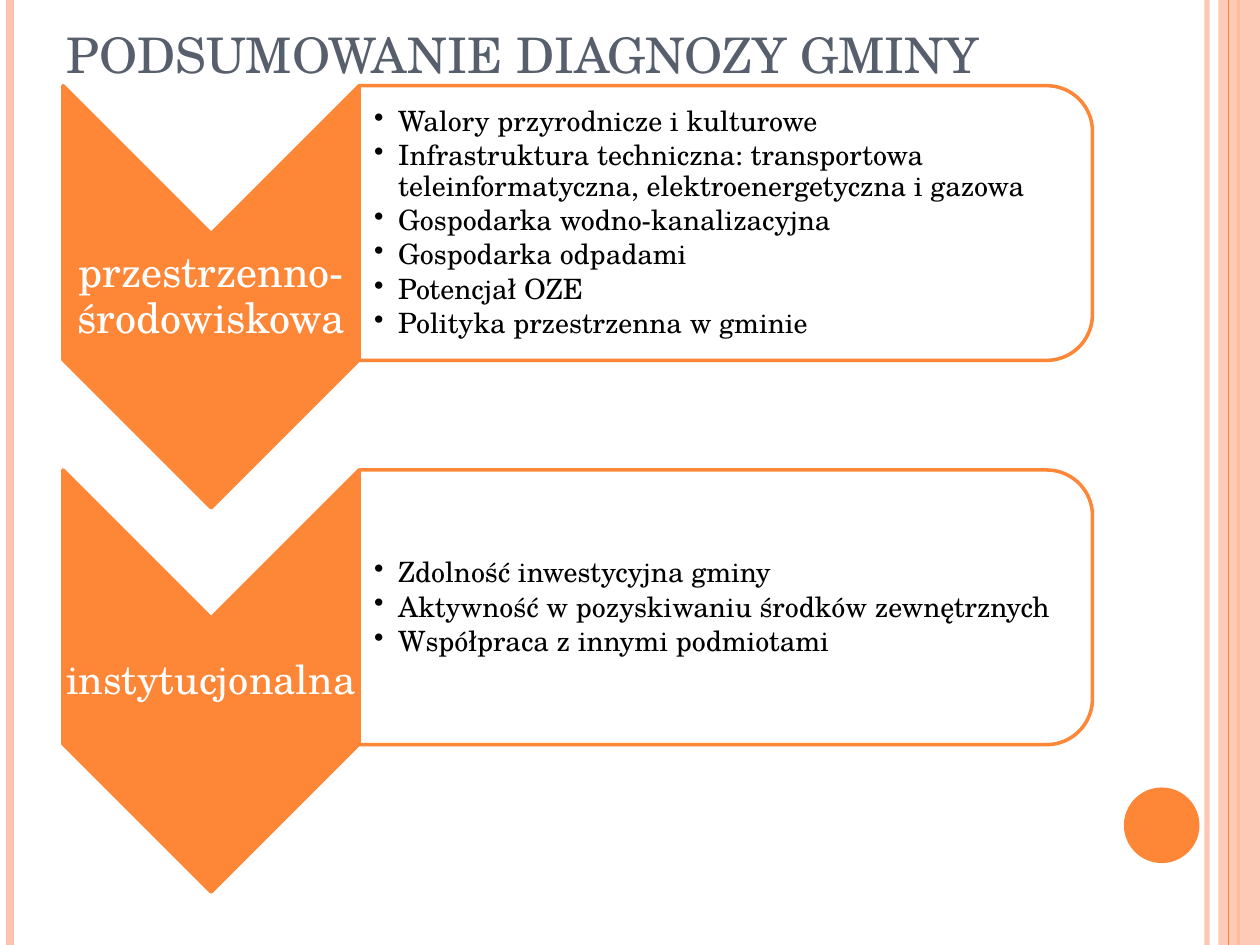
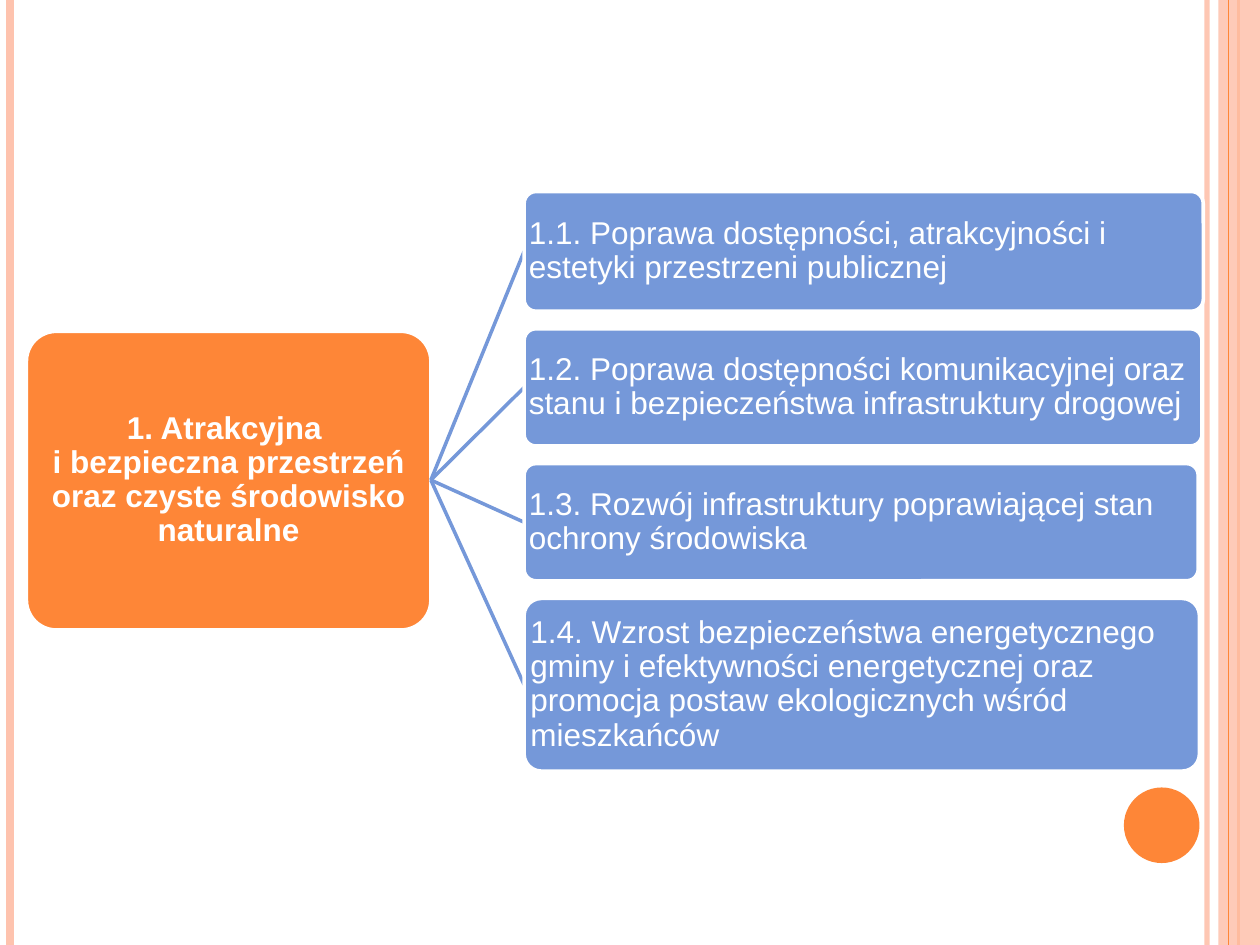
from dataclasses import dataclass

from pptx import Presentation
from pptx.dml.color import RGBColor
from pptx.enum.shapes import MSO_CONNECTOR, MSO_SHAPE
from pptx.enum.text import MSO_ANCHOR, PP_ALIGN
from pptx.oxml.ns import qn
from pptx.util import Inches, Pt
from lxml.etree import SubElement


@dataclass(frozen=True)
class Theme:
    """Colours, fonts and type sizes shared by the slides."""
    orange: str = "FE8637"
    peach: str = "FEC3AE"
    blue: str = "7598D9"
    slate: str = "575F6D"
    white: str = "FFFFFF"
    black: str = "000000"
    serif: str = "TeX Gyre Schola"
    sans: str = "Arial"
    title_size: int = 28
    list_size: int = 16
    goal_size: int = 18
    outline: int = 2


def apply(target, values):
    """Set each attribute named in values on the target."""
    for name, value in values.items():
        setattr(target, name, value)


class Deck:
    """Holds the theme and the current slide and draws each kind of element."""

    def __init__(self):
        """Start an empty 10 by 7.5 inch presentation."""
        self.theme = Theme()
        self.presentation = Presentation()
        apply(self.presentation, {"slide_width": Inches(10), "slide_height": Inches(7.5)})
        self.slide = None

    def new_slide(self):
        """Add a blank slide with the side stripes and the page dot."""
        theme = self.theme
        self.slide = self.presentation.slides.add_slide(self.presentation.slide_layouts[6])
        self.stripe(9.58, theme.peach, 3, 93)
        self.stripe(0.08, theme.peach, 4.5)
        self.stripe(9.83, theme.orange, 1.5)
        self.shape(MSO_SHAPE.RECTANGLE, (9.67, 0, 0.33, 7.5), theme.peach, opacity=87)
        self.stripe(9.75, theme.orange, 0.75)
        self.shape(MSO_SHAPE.OVAL, (8.92, 6.25, 0.6, 0.6), theme.orange)

    def fade(self, element, opacity):
        """Make the first colour of an element partly transparent."""
        if opacity < 100:
            colour = element.spPr.xpath(".//a:srgbClr")[0]
            SubElement(colour, qn("a:alpha"), val=str(opacity * 1000))

    def line(self, start, end, colour, weight, opacity=100):
        """Draw a straight line between two points."""
        line = self.slide.shapes.add_connector(
            MSO_CONNECTOR.STRAIGHT, *(Inches(value) for value in start + end))
        line.line.width = Pt(weight)
        line.line.color.rgb = RGBColor.from_string(colour)
        SubElement(line._element.spPr, qn("a:effectLst"))
        self.fade(line._element, opacity)

    def stripe(self, left, colour, weight, opacity=100):
        """Draw a full-height vertical line."""
        self.line((left, 0), (left, 7.5), colour, weight, opacity)

    def shape(self, preset, box, fill, outline=None, opacity=100):
        """Draw a filled preset shape."""
        shape = self.slide.shapes.add_shape(preset, *map(Inches, box))
        shape.shadow.inherit = False
        shape.fill.solid()
        shape.fill.fore_color.rgb = RGBColor.from_string(fill)
        if outline:
            shape.line.width = Pt(self.theme.outline)
            shape.line.color.rgb = RGBColor.from_string(outline)
        else:
            shape.line.fill.background()
        self.fade(shape._element, opacity)
        return shape

    def turned(self, preset, box, fill, opacity=100):
        """Draw a shape turned by 90 degrees that covers the given box."""
        left, top, width, height = box
        shift = (width - height) / 2
        shape = self.shape(preset, (left + shift, top - shift, height, width),
                           fill, self.theme.orange, opacity)
        shape.rotation = 90

    def typeset(self, frame, paragraphs, font, size, colour, bold=False, align=PP_ALIGN.LEFT,
                anchor=MSO_ANCHOR.MIDDLE, margins=(0.01,) * 4, spacing=0.9, after=0,
                bullets=False):
        """Fill a text frame with equally formatted paragraphs."""
        sides = ("margin_left", "margin_top", "margin_right", "margin_bottom")
        apply(frame, {"word_wrap": True, "vertical_anchor": anchor,
                      **dict(zip(sides, map(Inches, margins)))})
        for index, text in enumerate(paragraphs):
            paragraph = frame.add_paragraph() if index else frame.paragraphs[0]
            paragraph.text = text
            apply(paragraph, {"alignment": align, "line_spacing": spacing,
                              "space_after": Pt(size * after)})
            if bullets:
                properties = paragraph._p.get_or_add_pPr()
                properties.set("marL", str(Inches(0.19)))
                properties.set("indent", str(-Inches(0.19)))
                SubElement(properties, qn("a:buChar"), char="•")
            for run in paragraph.runs:
                apply(run.font, {"name": font, "size": Pt(size), "bold": bold})
                run.font.color.rgb = RGBColor.from_string(colour)

    def text(self, box, paragraphs, *style, **layout):
        """Add a text box."""
        frame = self.slide.shapes.add_textbox(*map(Inches, box)).text_frame
        self.typeset(frame, paragraphs, *style, **layout)

    def title(self, heading):
        """Add the slide title."""
        theme = self.theme
        self.text((0.43, 0, 8.17, 0.71), [heading], theme.serif, theme.title_size, theme.slate,
                  anchor=MSO_ANCHOR.BOTTOM, margins=(0.1, 0.05, 0.1, 0.05), spacing=1.0)

    def sphere(self, top, label, label_size, topics):
        """Draw a chevron with its label and the card of topics beside it."""
        theme = self.theme
        self.turned(MSO_SHAPE.CHEVRON, (0.5, top, 2.35, 3.35), theme.orange)
        self.text((0.5, top + 1.17, 2.35, 1.01), [label], theme.serif, label_size, theme.white,
                  align=PP_ALIGN.CENTER, margins=(0.02,) * 4)
        self.turned(MSO_SHAPE.ROUND_2_SAME_RECTANGLE, (2.85, top, 5.82, 2.18), theme.white, 90)
        self.text((2.85, top + 0.11, 5.71, 1.97), topics, theme.serif, theme.list_size,
                  theme.black, margins=(0.12, 0.01, 0.01, 0.01), after=0.15, bullets=True)

    def goal(self, box, wording, fill, **layout):
        """Draw a rounded goal box with its wording."""
        theme = self.theme
        goal = self.shape(MSO_SHAPE.ROUNDED_RECTANGLE, box, fill, theme.white)
        goal.adjustments[0] = 0.1
        self.typeset(goal.text_frame, [wording], theme.sans, theme.goal_size, theme.white,
                     **layout)


SPHERES = [
    ("przestrzenno-środowiskowa", 24, [
        "Walory przyrodnicze i kulturowe",
        "Infrastruktura techniczna: transportowa teleinformatyczna, elektroenergetyczna i gazowa",
        "Gospodarka wodno-kanalizacyjna",
        "Gospodarka odpadami",
        "Potencjał OZE",
        "Polityka przestrzenna w gminie",
    ]),
    ("instytucjonalna", 23, [
        "Zdolność inwestycyjna gminy",
        "Aktywność w pozyskiwaniu środków zewnętrznych",
        "Współpraca z innymi podmiotami",
    ]),
]

STRATEGIC_GOAL = "1. Atrakcyjna \vi bezpieczna przestrzeń oraz czyste środowisko naturalne"

OPERATIONAL_GOALS = [
    (5.39, 0.95, "1.1. Poprawa dostępności, atrakcyjności i estetyki przestrzeni publicznej"),
    (5.38, 0.93, "1.2. Poprawa dostępności komunikacyjnej oraz stanu i bezpieczeństwa "
                 "infrastruktury drogowej"),
    (5.35, 0.93, "1.3. Rozwój infrastruktury poprawiającej stan ochrony środowiska"),
    (5.36, 1.37, "1.4. Wzrost bezpieczeństwa energetycznego gminy i efektywności energetycznej "
                 "oraz promocja postaw ekologicznych wśród mieszkańców"),
]


def diagnosis_slide(deck):
    """Build the summary of the diagnosis."""
    deck.new_slide()
    deck.title("PODSUMOWANIE DIAGNOZY GMINY")
    for index, (label, label_size, topics) in enumerate(SPHERES):
        deck.sphere(0.68 + 3.05 * index, label, label_size, topics)


def goals_slide(deck):
    """Build the tree of goals."""
    theme = deck.theme
    deck.new_slide()
    deck.goal((0.21, 2.63, 3.21, 2.37), STRATEGIC_GOAL, theme.orange,
              bold=True, align=PP_ALIGN.CENTER)
    left, top, gap = 4.16, 1.52, 0.14
    for width, height, wording in OPERATIONAL_GOALS:
        deck.line((3.42, 3.81), (left, top + height / 2), theme.blue, theme.outline)
        deck.goal((left, top, width, height), wording, theme.blue)
        top += height + gap


def main():
    """Build and save the presentation."""
    deck = Deck()
    diagnosis_slide(deck)
    goals_slide(deck)
    deck.presentation.save("out.pptx")


if __name__ == "__main__":
    main()
